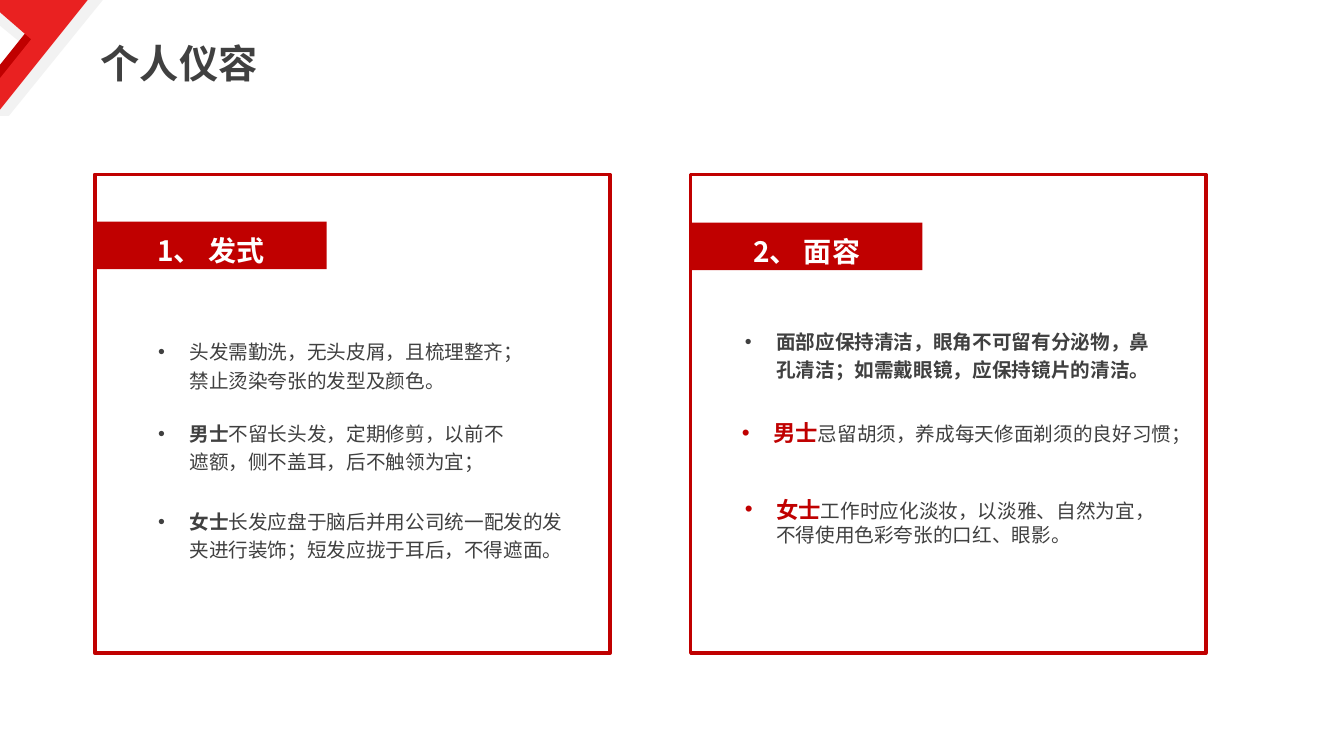
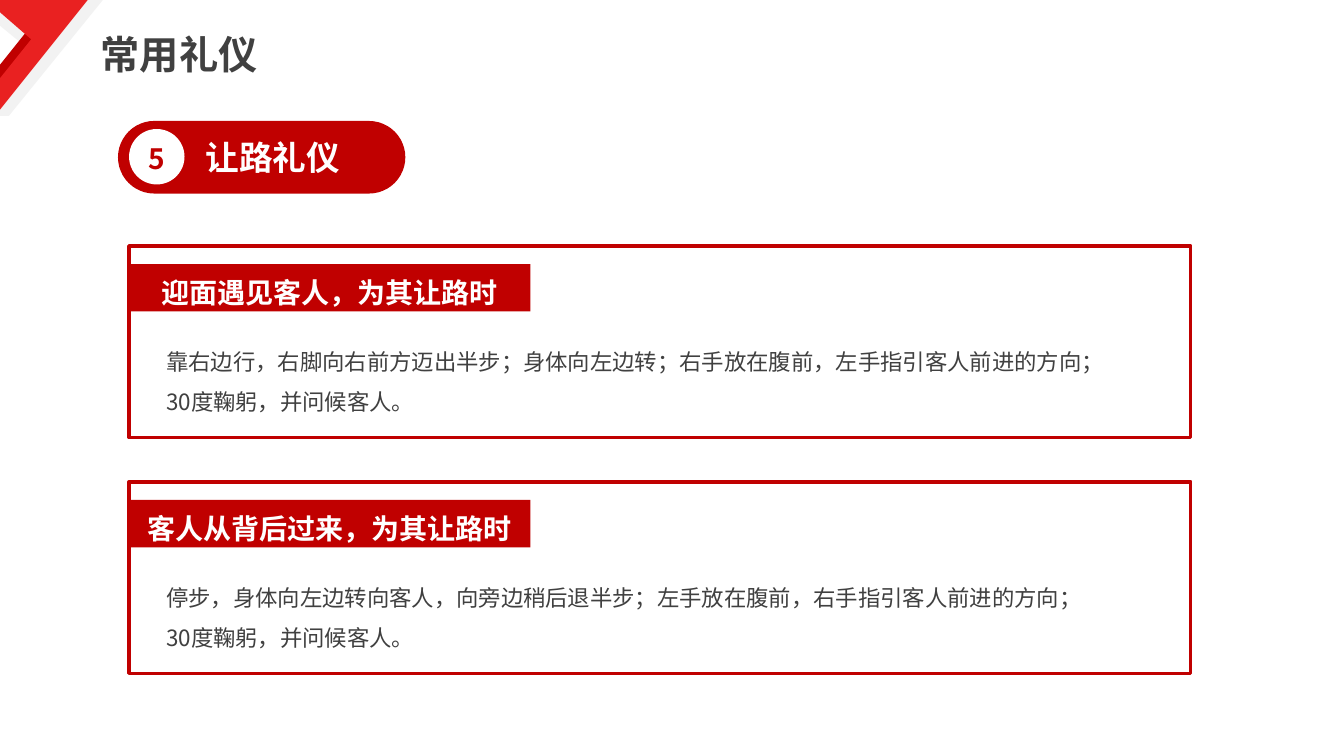
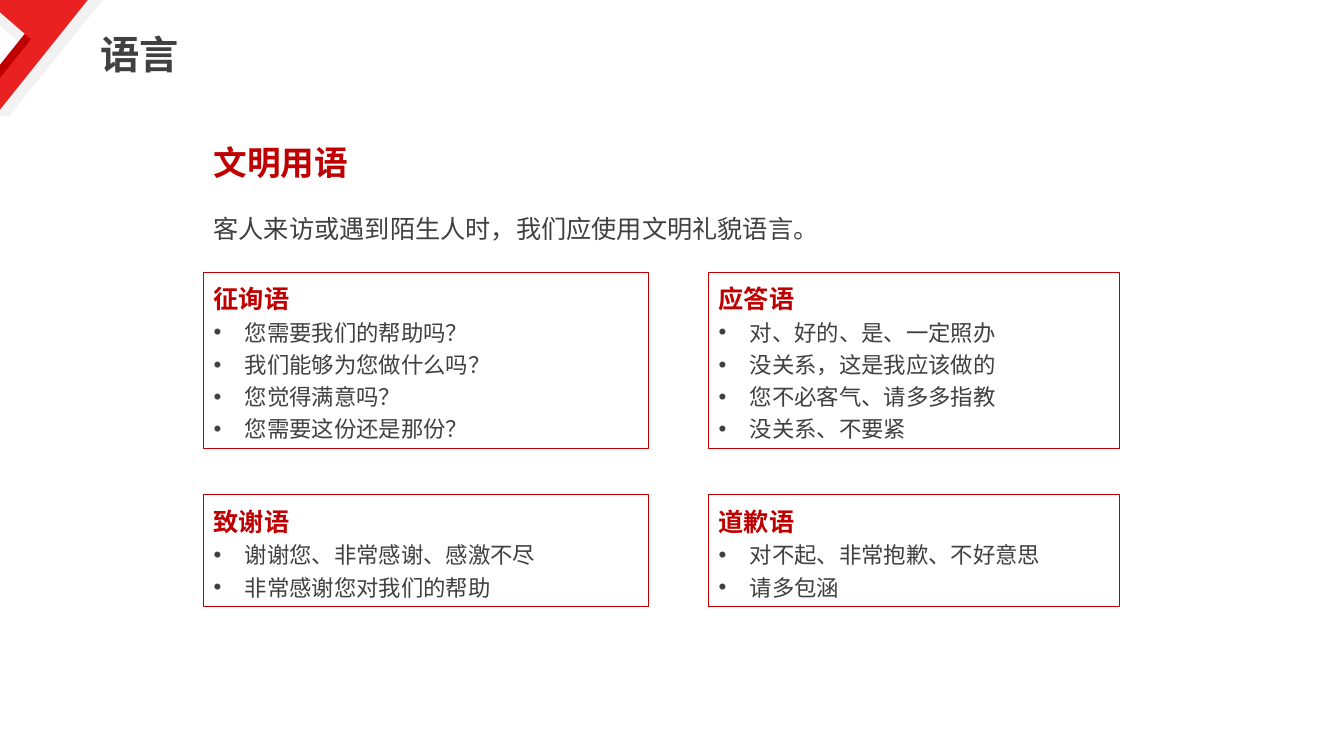
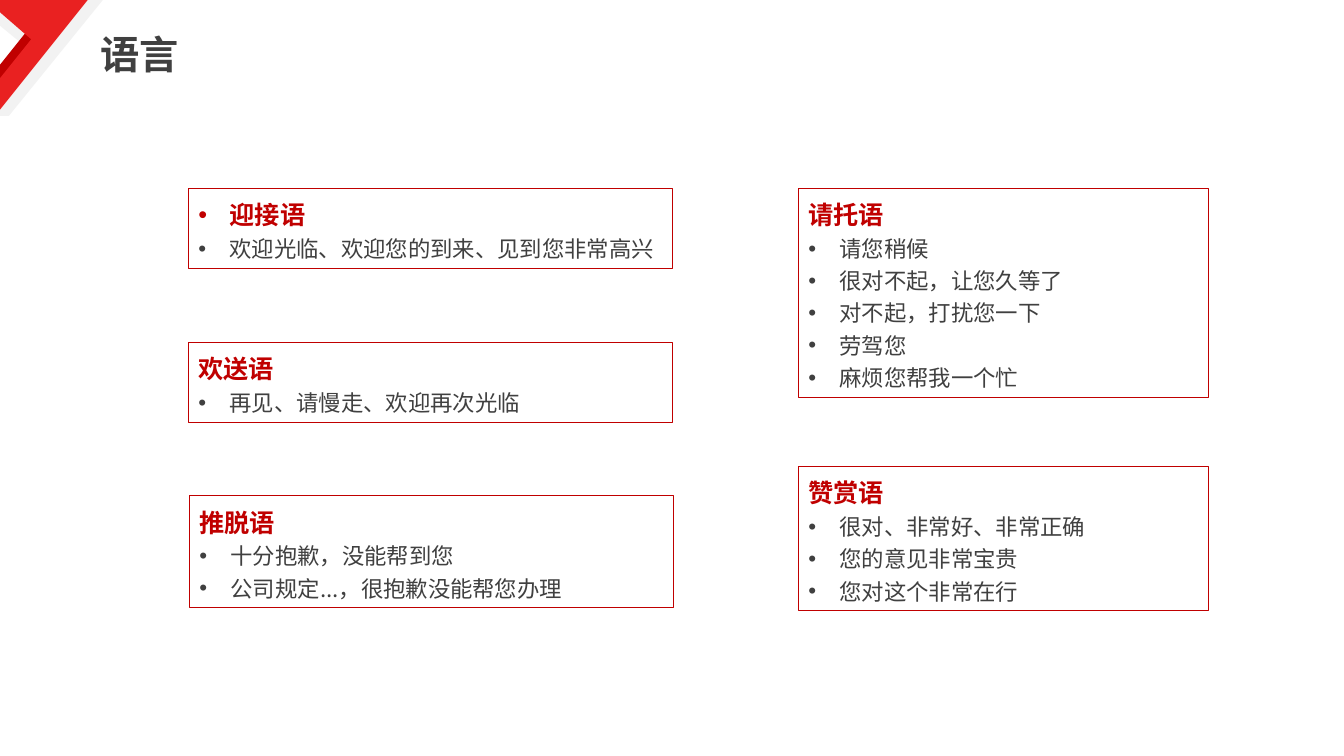
from dataclasses import dataclass, field

import lxml.etree
import pptx
import pptx.dml.color
import pptx.enum.shapes
import pptx.enum.text
import pptx.oxml.ns
import pptx.presentation
import pptx.shapes.autoshape
import pptx.shapes.base
import pptx.slide
import pptx.util

Inches = pptx.util.Inches
Color = pptx.dml.color.RGBColor
Preset = pptx.enum.shapes.MSO_SHAPE
Align = pptx.enum.text.PP_ALIGN
qn = pptx.oxml.ns.qn


@dataclass(frozen=True)
class Theme:
    font: str = "Noto Sans CJK SC"
    red: Color = field(default_factory=lambda: Color(0xC0, 0x00, 0x00))
    bright_red: Color = field(default_factory=lambda: Color(0xE9, 0x21, 0x21))
    pale: Color = field(default_factory=lambda: Color(0xF2, 0xF2, 0xF2))
    white: Color = field(default_factory=lambda: Color(0xFF, 0xFF, 0xFF))
    ink: Color = field(default_factory=lambda: Color(0x40, 0x40, 0x40))
    title: int = 28
    section: int = 24
    badge: int = 20
    heading: int = 18
    body: int = 16
    small: int = 14
    thick_line: float = 2.5
    thin_line: float = 0.75
    bullet_indent: float = 0.31
    loose: float = 1.2


THEME = Theme()


@dataclass(frozen=True)
class Box:
    left: float
    top: float
    width: float
    height: float

    def lengths(self) -> tuple[int, ...]:
        return tuple(Inches(n) for n in (self.left, self.top, self.width, self.height))


@dataclass(frozen=True)
class Span:
    text: str
    size: int
    color: Color = THEME.ink
    bold: bool = False


@dataclass(frozen=True)
class Line:
    spans: list[Span]
    spacing: float = 1.0
    bullet: bool = False
    align: Align = Align.LEFT
    space_before: float = 0


@dataclass(frozen=True)
class Note:
    box: Box
    line: Line
    wrap: bool = True


@dataclass(frozen=True)
class Panel:
    box: Box
    badge: str
    badge_offset: float
    badge_width: float
    notes: list[Note]


@dataclass(frozen=True)
class PhraseBox:
    left: float
    top: float
    width: float
    heading: str
    phrases: list[str]
    bulleted_heading: bool = False


def write_text(shape: pptx.shapes.base.BaseShape, lines: list[Line], wrap: bool = True) -> None:
    text_frame = shape.text_frame
    text_frame.word_wrap = wrap
    text_frame.vertical_anchor = pptx.enum.text.MSO_ANCHOR.TOP
    text_frame.auto_size = pptx.enum.text.MSO_AUTO_SIZE.SHAPE_TO_FIT_TEXT
    text_frame.text = "\n".join(line.spans[0].text for line in lines)
    for paragraph, line in zip(text_frame.paragraphs, lines):
        paragraph.alignment = line.align
        paragraph.line_spacing = line.spacing
        paragraph.space_before = pptx.util.Pt(line.space_before)
        for span in line.spans[1:]:
            paragraph.add_run().text = span.text
        for run, span in zip(paragraph.runs, line.spans):
            run.font.name = THEME.font
            run.font.size = pptx.util.Pt(span.size)
            run.font.bold = span.bold
            run.font.color.rgb = span.color
        if line.bullet:
            add_bullet(paragraph)
    for latin in list(shape.element.iter(qn("a:latin"))):
        east_asian = lxml.etree.Element(qn("a:ea"))
        east_asian.set("typeface", THEME.font)
        latin.addnext(east_asian)


def add_bullet(paragraph) -> None:
    properties = paragraph._p.get_or_add_pPr()
    indent = Inches(THEME.bullet_indent)
    properties.set("marL", str(indent))
    properties.set("indent", str(-indent))
    lxml.etree.SubElement(properties, qn("a:buFont")).set("typeface", "Arial")
    lxml.etree.SubElement(properties, qn("a:buChar")).set("char", "•")


def paint(shape: pptx.shapes.autoshape.Shape, color: Color) -> None:
    shape.shadow.inherit = False
    shape.fill.solid()
    shape.fill.fore_color.rgb = color
    shape.line.fill.background()


def add_solid(slide: pptx.slide.Slide, preset: Preset, box: Box,
              color: Color) -> pptx.shapes.autoshape.Shape:
    shape = slide.shapes.add_shape(preset, *box.lengths())
    paint(shape, color)
    return shape


def add_frame(slide: pptx.slide.Slide, box: Box, width: float) -> pptx.shapes.autoshape.Shape:
    shape = slide.shapes.add_shape(Preset.RECTANGLE, *box.lengths())
    shape.shadow.inherit = False
    shape.fill.background()
    shape.line.color.rgb = THEME.red
    shape.line.width = pptx.util.Pt(width)
    return shape


def add_text(slide: pptx.slide.Slide, box: Box, lines: list[Line], wrap: bool = True) -> None:
    write_text(slide.shapes.add_textbox(*box.lengths()), lines, wrap)


def add_outline(slide: pptx.slide.Slide, points: list[tuple[float, float]],
                color: Color) -> pptx.shapes.autoshape.Shape:
    corners = [(Inches(x), Inches(y)) for x, y in points]
    builder = slide.shapes.build_freeform(*corners[0], scale=1.0)
    builder.add_line_segments(corners[1:], close=True)
    shape = builder.convert_to_shape()
    paint(shape, color)
    return shape


def add_corner_to_layout(slide: pptx.slide.Slide) -> None:
    band = add_solid(slide, Preset.PARALLELOGRAM, Box(-0.09, 0, 1.11, 1.15), THEME.pale)
    band.adjustments[0] = 0.84
    triangle = add_solid(slide, Preset.RIGHT_TRIANGLE, Box(-0.31, 0, 0.67, 0.55), THEME.pale)
    triangle.rotation = 180
    fold = add_outline(slide, [(0.41, 0.13), (0.63, 0.13), (0.09, 0.81), (0.13, 0.85),
                               (-0.1, 1.15), (-0.41, 1.15), (-0.19, 0.88)], THEME.red)
    arrow = add_outline(slide, [(-0.14, 0), (0.87, 0), (0.63, 0.3), (-0.05, 1.15),
                                (-0.3, 1.15), (0.31, 0.39)], THEME.bright_red)
    layout_tree = slide.slide_layout.shapes.element
    for number, shape in enumerate((band, triangle, fold, arrow), start=20):
        next(shape.element.iter(qn("p:cNvPr"))).set("id", str(number))
        layout_tree.append(shape.element)


def add_titled_slide(presentation: pptx.presentation.Presentation, title: str,
                     spacing: float = 1.0) -> pptx.slide.Slide:
    slide = presentation.slides.add_slide(presentation.slide_layouts.get_by_name("Title Only"))
    shape = slide.shapes.title
    box = Box(0.9, 0.25, 0.21 + 0.39 * len(title), 0.57)
    shape.left, shape.top, shape.width, shape.height = box.lengths()
    write_text(shape, [Line([Span(title, THEME.title, bold=True)], spacing)], wrap=False)
    return slide


def add_panel(slide: pptx.slide.Slide, panel: Panel) -> None:
    add_frame(slide, panel.box, THEME.thick_line)
    badge_box = Box(panel.box.left, panel.box.top + panel.badge_offset, panel.badge_width, 0.47)
    badge = add_solid(slide, Preset.RECTANGLE, badge_box, THEME.red)
    write_text(badge, [Line([Span(panel.badge, THEME.badge, THEME.white, True)],
                            THEME.loose, align=Align.CENTER)])
    for note in panel.notes:
        add_text(slide, note.box, [note.line], note.wrap)


def add_phrase_box(slide: pptx.slide.Slide, item: PhraseBox) -> None:
    box = Box(item.left, item.top, item.width, 0.47 + 0.32 * len(item.phrases))
    heading = Line([Span(item.heading, THEME.heading, THEME.red, True)],
                   THEME.loose, item.bulleted_heading)
    phrases = [Line([Span(phrase, THEME.body)], THEME.loose, True) for phrase in item.phrases]
    write_text(add_frame(slide, box, THEME.thin_line), [heading, *phrases])


def hair_line(lead: str, text: str) -> Line:
    spans = [Span(lead, THEME.small, bold=True), Span(text, THEME.small)]
    return Line([span for span in spans if span.text], THEME.loose, True)


def face_line(lead: str, text: str) -> Line:
    return Line([Span(lead, THEME.body, THEME.red, True), Span(text, THEME.small)], bullet=True)


def build_appearance(presentation: pptx.presentation.Presentation) -> None:
    slide = add_titled_slide(presentation, "个人仪容", THEME.loose)
    add_corner_to_layout(slide)
    hair_notes = [
        Note(Box(1.47, 3.28, 3.68, 0.64),
             hair_line("", "头发需勤洗，无头皮屑，且梳理整齐；禁止烫染夸张的发型及颜色。")),
        Note(Box(1.47, 4.09, 3.79, 0.64),
             hair_line("男士", "不留长头发，定期修剪，以前不遮额，侧不盖耳，后不触领为宜；")),
        Note(Box(1.47, 4.96, 4.32, 0.64),
             hair_line("女士", "长发应盘于脑后并用公司统一配发的发夹进行装饰；短发应拢于耳后，不得遮面。")),
    ]
    face_notes = [
        Note(Box(7.29, 3.18, 4.27, 0.64),
             hair_line("面部应保持清洁，眼角不可留有分泌物，鼻孔清洁；如需戴眼镜，应保持镜片的清洁。", "")),
        Note(Box(7.26, 4.11, 4.7, 0.37),
             face_line("男士", "忌留胡须，养成每天修面剃须的良好习惯；"), wrap=False),
        Note(Box(7.29, 4.87, 4.17, 0.61),
             face_line("女士", "工作时应化淡妆，以淡雅、自然为宜，不得使用色彩夸张的口红、眼影。")),
    ]
    add_panel(slide, Panel(Box(0.94, 1.73, 5.11, 4.75), "1、 发式", 0.47, 2.3, hair_notes))
    add_panel(slide, Panel(Box(6.85, 1.73, 5.11, 4.75), "2、 面容", 0.48, 2.3, face_notes))


def build_giving_way(presentation: pptx.presentation.Presentation) -> None:
    slide = add_titled_slide(presentation, "常用礼仪")
    pill = add_solid(slide, Preset.ROUNDED_RECTANGLE, Box(1.17, 1.2, 2.85, 0.72), THEME.red)
    pill.adjustments[0] = 0.5
    add_solid(slide, Preset.OVAL, Box(1.28, 1.28, 0.55, 0.55), THEME.white)
    add_text(slide, Box(1.94, 1.31, 1.74, 0.5),
             [Line([Span("让路礼仪", THEME.section, THEME.white, True)])])
    add_text(slide, Box(1.37, 1.35, 0.5, 0.44),
             [Line([Span("5", THEME.badge, THEME.red, True)])])
    situations = [
        ("迎面遇见客人，为其让路时",
         "靠右边行，右脚向右前方迈出半步；身体向左边转；右手放在腹前，左手指引客人前进的方向；"),
        ("客人从背后过来，为其让路时",
         "停步，身体向左边转向客人，向旁边稍后退半步；左手放在腹前，右手指引客人前进的方向；"),
    ]
    for index, (badge, advice) in enumerate(situations):
        top = 2.44 + 2.34 * index
        add_panel(slide, Panel(Box(1.28, top, 10.53, 1.9), badge, 0.18, 3.98, []))
        add_text(slide, Box(1.55, top + 0.83, 9.89, 0.86),
                 [Line([Span(text, THEME.body)], 1.5)
                  for text in (advice, "30度鞠躬，并问候客人。")])


def build_polite_words(presentation: pptx.presentation.Presentation) -> None:
    slide = add_titled_slide(presentation, "语言")
    add_text(slide, Box(2.02, 1.36, 6.67, 1.11), [
        Line([Span("文明用语", THEME.section, THEME.red, True)]),
        Line([Span("客人来访或遇到陌生人时，我们应使用文明礼貌语言。", THEME.heading)],
             space_before=22),
    ])
    for item in (
        PhraseBox(2.02, 2.7, 4.41, "征询语",
                  ["您需要我们的帮助吗？", "我们能够为您做什么吗？", "您觉得满意吗？", "您需要这份还是那份？"]),
        PhraseBox(2.02, 4.91, 4.41, "致谢语",
                  ["谢谢您、非常感谢、感激不尽", "非常感谢您对我们的帮助"]),
        PhraseBox(7.03, 4.91, 4.07, "道歉语",
                  ["对不起、非常抱歉、不好意思", "请多包涵"]),
        PhraseBox(7.03, 2.7, 4.07, "应答语",
                  ["对、好的、是、一定照办", "没关系，这是我应该做的", "您不必客气、请多多指教", "没关系、不要紧"]),
    ):
        add_phrase_box(slide, item)


def build_more_words(presentation: pptx.presentation.Presentation) -> None:
    slide = add_titled_slide(presentation, "语言")
    for item in (
        PhraseBox(1.87, 1.87, 4.8, "迎接语", ["欢迎光临、欢迎您的到来、见到您非常高兴"], True),
        PhraseBox(1.87, 3.4, 4.8, "欢送语", ["再见、请慢走、欢迎再次光临"]),
        PhraseBox(1.88, 4.92, 4.8, "推脱语",
                  ["十分抱歉，没能帮到您", "公司规定...，很抱歉没能帮您办理"]),
        PhraseBox(7.92, 4.63, 4.07, "赞赏语",
                  ["很对、非常好、非常正确", "您的意见非常宝贵", "您对这个非常在行"]),
        PhraseBox(7.92, 1.87, 4.07, "请托语",
                  ["请您稍候", "很对不起，让您久等了", "对不起，打扰您一下", "劳驾您", "麻烦您帮我一个忙"]),
    ):
        add_phrase_box(slide, item)


def main() -> None:
    presentation = pptx.Presentation()
    presentation.slide_width = Inches(13.33)
    presentation.slide_height = Inches(7.5)
    build_appearance(presentation)
    build_giving_way(presentation)
    build_polite_words(presentation)
    build_more_words(presentation)
    presentation.save("out.pptx")


if __name__ == "__main__":
    main()
